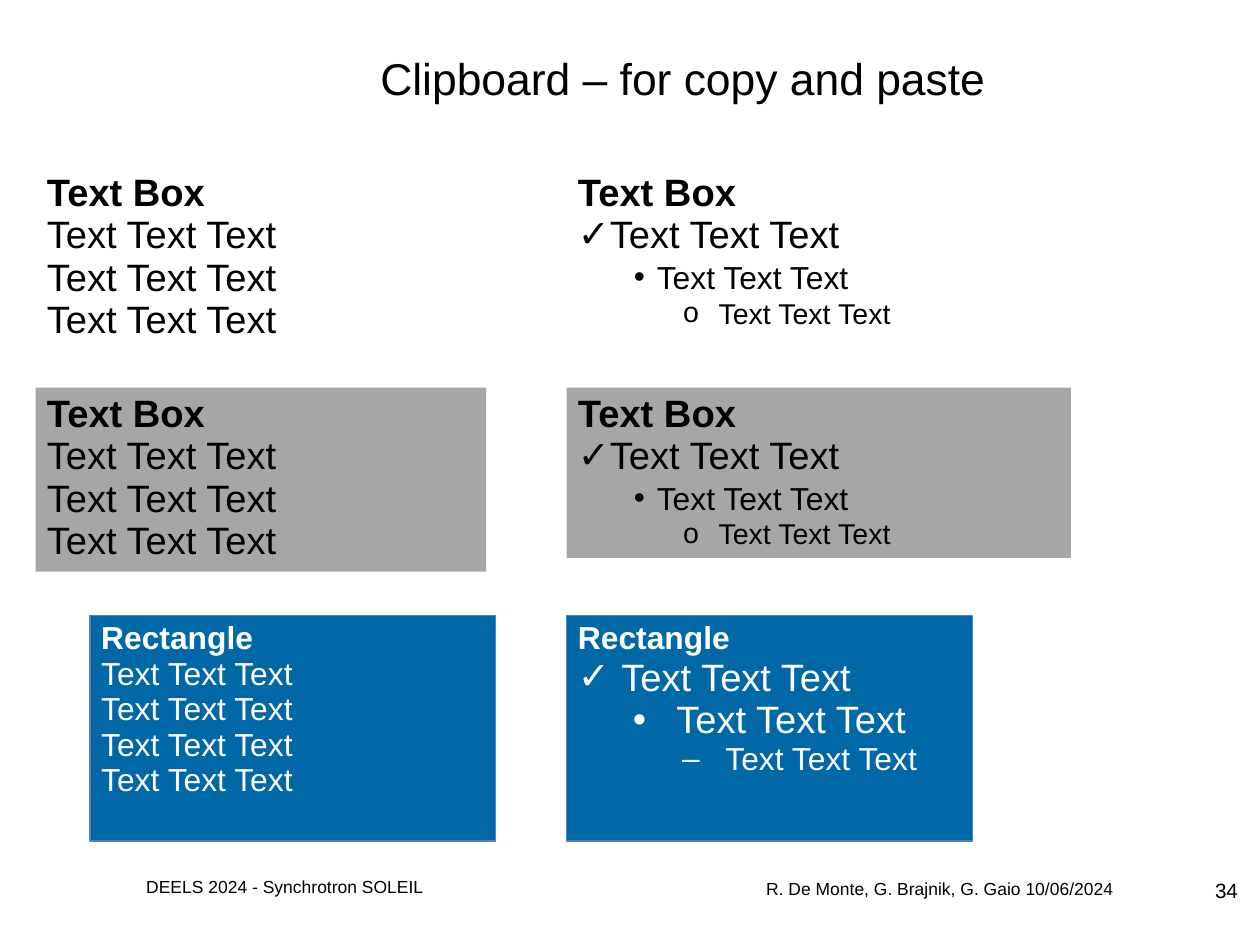
from lxml import etree
from pptx import Presentation
from pptx.dml.color import RGBColor
from pptx.enum.shapes import MSO_SHAPE
from pptx.enum.text import MSO_ANCHOR, PP_ALIGN
from pptx.oxml.ns import qn
from pptx.util import Emu, Inches, Pt

RECTANGLE = MSO_SHAPE.RECTANGLE
TOP, MIDDLE = MSO_ANCHOR.TOP, MSO_ANCHOR.MIDDLE
LEFT, RIGHT = PP_ALIGN.LEFT, PP_ALIGN.RIGHT
COLORS = {"black": "000000", "white": "FFFFFF", "gray": "A6A6A6",
          "blue": "0068A6", "border": "4F81BD"}
FONT = "Arial"
SAMPLE = "Text Text Text"

presentation = Presentation()
presentation.slide_width = Emu(10080625)
presentation.slide_height = Emu(7559675)
slide = presentation.slides.add_slide(presentation.slide_layouts[6])


def add_box(percents, fill=None, line=None, anchor=TOP, insets=(0.1, 0.05, 0.1, 0.05)):
    sides = (presentation.slide_width, presentation.slide_height) * 2
    place = [int(side * percent / 100) for side, percent in zip(sides, percents)]
    if fill:
        shape = slide.shapes.add_shape(RECTANGLE, *place)
        shape.shadow.inherit = False
        shape.fill.solid()
        shape.fill.fore_color.rgb = RGBColor.from_string(COLORS[fill])
        if line:
            shape.line.color.rgb = RGBColor.from_string(COLORS[line])
            shape.line.width = Pt(0.75)
        else:
            shape.line.fill.background()
    else:
        shape = slide.shapes.add_textbox(*place)
    frame = shape.text_frame
    frame.word_wrap = True
    frame.vertical_anchor = anchor
    frame.margin_left, frame.margin_top, frame.margin_right, frame.margin_bottom = map(Inches, insets)
    return frame


def add_text(frame, text, size, color="black", bold=False, align=LEFT, spacing=0.93,
             level=0, bullet=None, margin=0, indent=0):
    paragraph = frame.paragraphs[0]
    if paragraph.runs:
        paragraph = frame.add_paragraph()
    paragraph.alignment = align
    paragraph.line_spacing = spacing
    paragraph.level = level
    if bullet:
        properties = paragraph._p.get_or_add_pPr()
        properties.set("marL", str(Inches(margin)))
        properties.set("indent", str(Inches(indent)))
        bullet_color = etree.SubElement(properties, qn("a:buClr"))
        etree.SubElement(bullet_color, qn("a:srgbClr"), val=COLORS[color])
        etree.SubElement(properties, qn("a:buFont"), typeface=FONT)
        etree.SubElement(properties, qn("a:buChar"), char=bullet)
    run = paragraph.add_run()
    run.text = text
    run.font.name = FONT
    run.font.size = Pt(size)
    run.font.bold = bold
    run.font.color.rgb = RGBColor.from_string(COLORS[color])


footer_insets = (0.1, 0.06, 0.1, 0.05)
authors = add_box((57.89, 92.34, 31.4, 4.11), insets=footer_insets)
add_text(authors, "R. De Monte, G. Brajnik, G. Gaio 10/06/2024", 11, align=RIGHT)
event = add_box((10.71, 92.22, 48.55, 4.72), insets=footer_insets)
add_text(event, "DEELS 2024 - Synchrotron SOLEIL", 11)
title = add_box((29.29, 2.4, 66.42, 12.33), anchor=MIDDLE)
add_text(title, "Clipboard – for copy and paste", 28)
page_number = add_box((96.43, 93.16, 2.09, 3.02), insets=(0, 0, 0, 0))
add_text(page_number, "34", 13)

text_box_levels = [
    dict(size=24, bullet="✓"),
    dict(size=20, bullet="•", level=1, margin=0.69, indent=-0.2, spacing=1.0),
    dict(size=18, bullet="o", level=2, margin=1.23, indent=-0.31, spacing=1.0),
]
rectangle_levels = [
    dict(size=24, bullet="✓", margin=0.38, indent=-0.38),
    dict(size=24, bullet="•", level=1, margin=0.86, indent=-0.38),
    dict(size=20, bullet="–", level=2, margin=1.29, indent=-0.38),
]
plain_column, bullet_column, rectangle_column = 2.83, 44.98, 7.14
text_box_rows = ((17.64, None), (41.02, "gray"))
rectangle_row = 65.18

panels = []
for top, fill in text_box_rows:
    panels += [
        ("Text Box", 24, "black", (plain_column, top, 35.75, 19.47), fill, None, [dict(size=24)] * 3),
        ("Text Box", 24, "black", (bullet_column, top, 40.02, 18.02), fill, None, text_box_levels),
    ]
for left, levels in ((rectangle_column, [dict(size=20)] * 4), (bullet_column, rectangle_levels)):
    panels.append(("Rectangle", 20, "white", (left, rectangle_row, 32.21, 23.82), "blue", "border", levels))

for heading, size, color, percents, fill, line, levels in panels:
    frame = add_box(percents, fill, line)
    add_text(frame, heading, size, color, bold=True)
    for level_format in levels:
        add_text(frame, SAMPLE, color=color, **level_format)

presentation.save("out.pptx")
